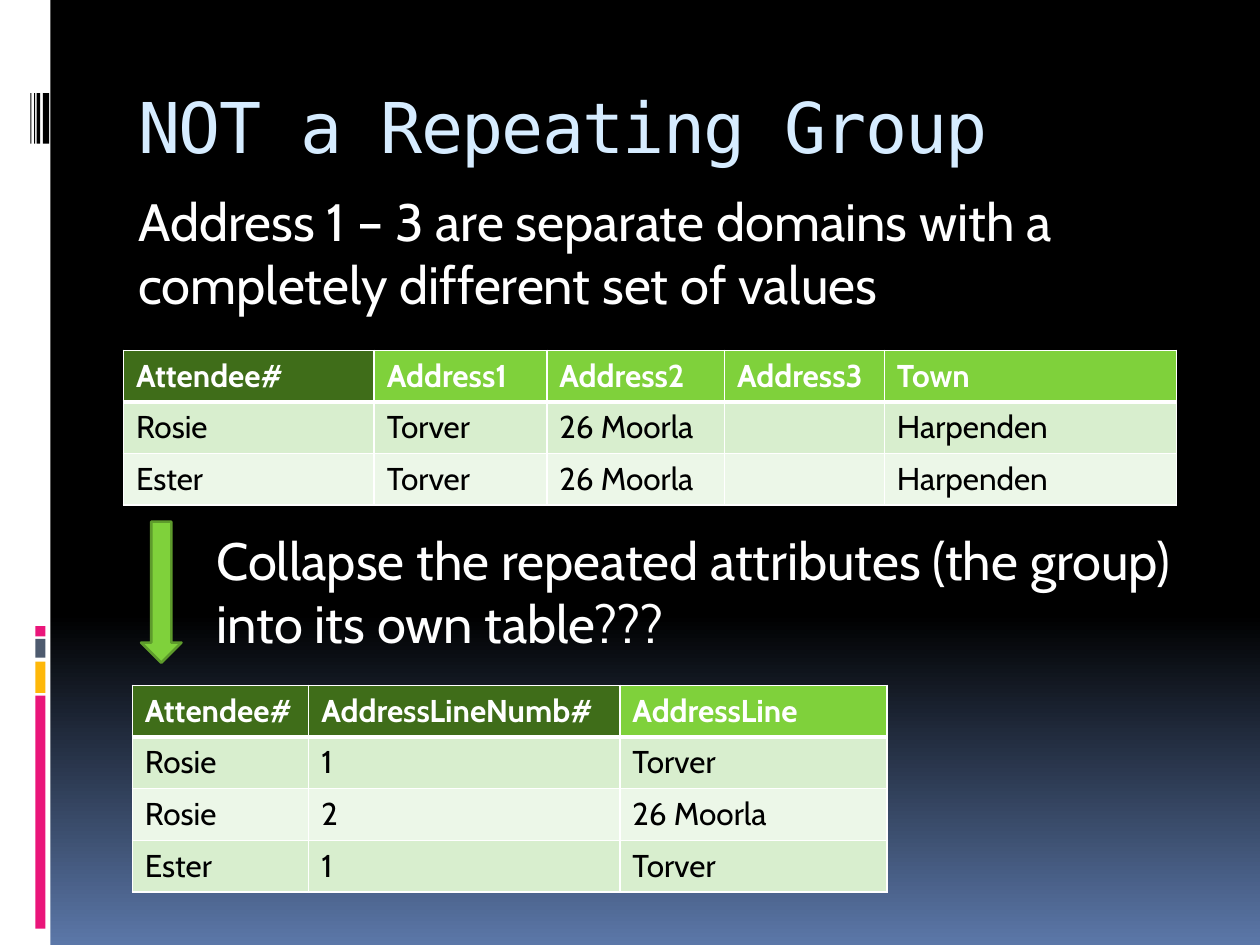
from dataclasses import dataclass

from lxml import etree
from pptx import Presentation
from pptx import util as u
from pptx.dml.color import RGBColor
from pptx.enum import shapes, text
from pptx.oxml import ns

COLORS = {
    "white": "FFFFFF",
    "black": "000000",
    "dusk": "5B77A8",
    "title": "D6ECFF",
    "pink": "EA157A",
    "amber": "FEB80A",
    "slate": "4E5B6F",
    "key": "3F6D19",
    "green": "7FD13B",
    "outline": "5E9B2C",
    "odd": "D8EECE",
    "even": "ECF7E8",
}
BODY_FONT = "Cabin"
TITLE_FONT = "DejaVu Sans Mono"
ROW_HEIGHT = 0.41


@dataclass
class Bar:
    left: float
    top: float
    width: float
    height: float
    color: str


@dataclass
class Grid:
    left: float
    top: float
    widths: list[float]
    rows: list[list[str]]


@dataclass
class Note:
    left: float
    top: float
    width: float
    height: float
    words: str


BARS = [
    Bar(0, 0, 0.4, 7.5, "white"),
    *[Bar(0.28, top, 0.08, height, color) for top, height, color in [
        (5.52, 1.85, "pink"), (5.25, 0.25, "amber"),
        (5.07, 0.15, "slate"), (4.97, 0.08, "pink"),
    ]],
    *[Bar(left, 0.74, width, 0.4, "black") for left, width in [
        (0.34, 0.05), (0.29, 0.03), (0.27, 0.01), (0.24, 0.01),
    ]],
]

ATTENDEES = Grid(0.98, 2.78, [1.99, 1.37, 1.41, 1.27, 2.32], [
    ["Attendee#", "Address1", "Address2", "Address3", "Town"],
    ["Rosie", "Torver", "26 Moorla", "", "Harpenden"],
    ["Ester", "Torver", "26 Moorla", "", "Harpenden"],
])
ADDRESS_LINES = Grid(1.05, 5.44, [1.4, 2.47, 2.12], [
    ["Attendee#", "AddressLineNumb#", "AddressLine"],
    ["Rosie", "1", "Torver"],
    ["Rosie", "2", "26 Moorla"],
    ["Ester", "1", "Torver"],
])

NOTES = [
    Note(0.93, 1.45, 8.46, 1.26,
         "Address 1 – 3 are separate domains with a completely different set of values"),
    Note(1.55, 4.14, 7.97, 1.07,
         "Collapse the repeated attributes (the group) into its own table???"),
]


def rgb(name: str) -> RGBColor:
    return RGBColor.from_string(COLORS[name])


def style_font(para, name: str, size: float, color: str, bold: bool = False) -> None:
    para.font.name = name
    para.font.size = u.Pt(size)
    para.font.bold = bold
    para.font.color.rgb = rgb(color)


def paint_background(page) -> None:
    fill = page.background.fill
    fill.gradient()
    fill.gradient_angle = 270
    for stop, position, color in zip(fill.gradient_stops, (0.65, 1), ("black", "dusk")):
        stop.position = position
        stop.color.rgb = rgb(color)


def add_bar(page, bar: Bar) -> None:
    box = page.shapes.add_shape(
        shapes.MSO_SHAPE.RECTANGLE,
        *map(u.Inches, (bar.left, bar.top, bar.width, bar.height)))
    box.shadow.inherit = False
    box.fill.solid()
    box.fill.fore_color.rgb = rgb(bar.color)
    box.line.fill.background()


def set_title(page, words: str) -> None:
    title = page.shapes.title
    title.left, title.top, title.width, title.height = map(u.Inches, (1, 0.56, 8.5, 1))
    frame = title.text_frame
    frame.text = words
    frame.vertical_anchor = text.MSO_ANCHOR.TOP
    frame.margin_top = u.Inches(0.1)
    para = frame.paragraphs[0]
    para.alignment = text.PP_ALIGN.LEFT
    style_font(para, TITLE_FONT, 40, "title")
    para._p.get_or_add_pPr().get_or_add_defRPr().set("spc", "-100")


def add_note(page, note: Note) -> None:
    box = page.shapes.add_textbox(
        *map(u.Inches, (note.left, note.top, note.width, note.height)))
    frame = box.text_frame
    frame.word_wrap = True
    frame.text = note.words
    para = frame.paragraphs[0]
    para.space_before = u.Pt(7)
    para._p.get_or_add_pPr().set("marL", str(u.Inches(0.07)))
    style_font(para, BODY_FONT, 30, "white")


def add_border(cell, side: str, points: float) -> None:
    properties = cell._tc.get_or_add_tcPr()
    line = etree.SubElement(properties, ns.qn(f"a:ln{side}"), w=str(u.Pt(points)))
    solid = etree.SubElement(line, ns.qn("a:solidFill"))
    etree.SubElement(solid, ns.qn("a:srgbClr"), val=COLORS["white"])


def cell_color(row: int, heading: str) -> str:
    if row == 0:
        return "key" if heading.endswith("#") else "green"
    return "odd" if row % 2 else "even"


def add_grid(page, grid: Grid) -> None:
    frame = page.shapes.add_table(
        len(grid.rows), len(grid.widths), u.Inches(grid.left), u.Inches(grid.top),
        u.Inches(sum(grid.widths)), u.Inches(ROW_HEIGHT * len(grid.rows)))
    table = frame.table
    for column, width in zip(table.columns, grid.widths):
        column.width = u.Inches(width)
    for r, values in enumerate(grid.rows):
        table.rows[r].height = u.Inches(ROW_HEIGHT)
        for c, value in enumerate(values):
            cell = table.cell(r, c)
            cell.text = value
            header = r == 0
            style_font(cell.text_frame.paragraphs[0], BODY_FONT, 18,
                       "white" if header else "black", header)
            for side in "LRTB":
                thick = (r, side) in ((0, "B"), (1, "T"))
                add_border(cell, side, 3 if thick else 1)
            cell.fill.solid()
            cell.fill.fore_color.rgb = rgb(cell_color(r, grid.rows[0][c]))


def add_down_arrow(page) -> None:
    arrow = page.shapes.add_shape(
        shapes.MSO_SHAPE.DOWN_ARROW, *map(u.Inches, (1.12, 4.14, 0.32, 1.12)))
    arrow.shadow.inherit = False
    arrow.fill.solid()
    arrow.fill.fore_color.rgb = rgb("green")
    arrow.line.color.rgb = rgb("outline")
    arrow.line.width = u.Pt(1.5)


def main() -> None:
    deck = Presentation()
    deck.slide_width, deck.slide_height = u.Inches(10), u.Inches(7.5)
    page = deck.slides.add_slide(deck.slide_layouts.get_by_name("Title Only"))
    paint_background(page)
    for bar in BARS:
        add_bar(page, bar)
    set_title(page, "NOT a Repeating Group")
    for grid in (ATTENDEES, ADDRESS_LINES):
        add_grid(page, grid)
    add_down_arrow(page)
    for note in NOTES:
        add_note(page, note)
    deck.save("out.pptx")


if __name__ == "__main__":
    main()
